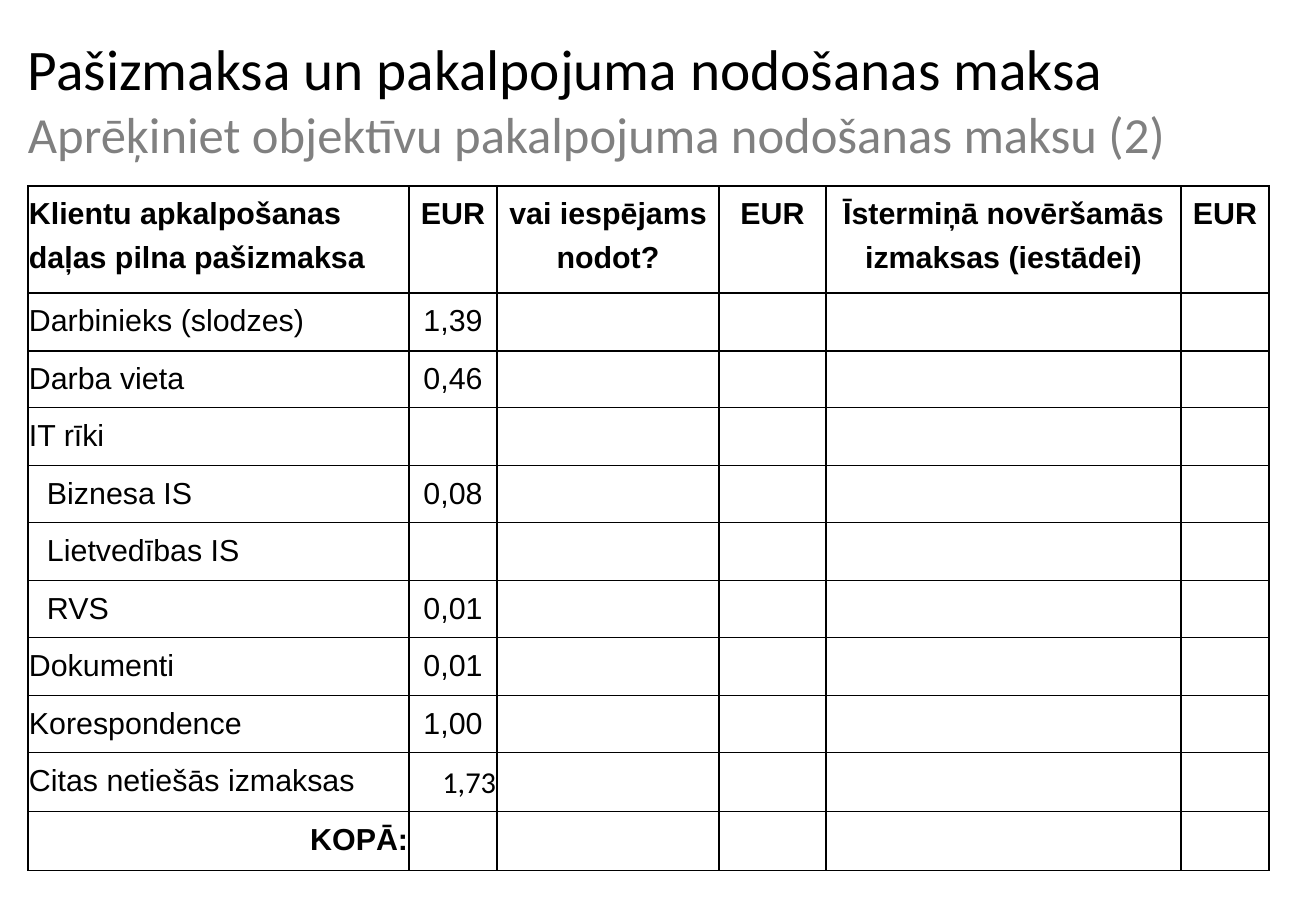
"""Build the slide with the cost and service transfer fee table."""
from dataclasses import dataclass

from lxml import etree
from pptx import Presentation, util as u
from pptx.dml.color import RGBColor
from pptx.enum import text as t
from pptx.oxml import ns

PX = 7526
COLORS = {"ink": "000000", "subtitle": "808080"}
COLUMN_WIDTHS = [381, 88, 222, 107, 355, 88]
ROW_HEIGHTS = [107] + [58, 57] * 4 + [59, 59]
INSET = 1
INDENT = 19
LEFT, CENTER, RIGHT = t.PP_ALIGN.LEFT, t.PP_ALIGN.CENTER, t.PP_ALIGN.RIGHT


@dataclass(frozen=True)
class CostItem:
    label: str
    cost: str = ""
    inset: int = INSET
    label_align: t.PP_ALIGN = LEFT
    cost_align: t.PP_ALIGN = CENTER
    cost_font: str = "Arial"
    bold: bool = False


HEADINGS = [
    "Klientu apkalpošanas daļas pilna pašizmaksa", "EUR", "vai iespējams nodot?",
    "EUR", "Īstermiņā novēršamās izmaksas (iestādei)", "EUR",
]
COST_ITEMS = [
    CostItem("Darbinieks (slodzes)", "1,39"),
    CostItem("Darba vieta", "0,46"),
    CostItem("IT rīki"),
    CostItem("Biznesa IS", "0,08", inset=INDENT),
    CostItem("Lietvedības IS", inset=INDENT),
    CostItem("RVS", "0,01", inset=INDENT),
    CostItem("Dokumenti", "0,01"),
    CostItem("Korespondence", "1,00"),
    CostItem("Citas netiešās izmaksas", "1,73", cost_align=RIGHT, cost_font="Calibri"),
    CostItem("KOPĀ:", label_align=RIGHT, bold=True),
]


def px(length: int) -> u.Emu:
    return u.Emu(length * PX)


def write(paragraph, content: str, *, size: int = 18, font: str = "Arial",
          color: str = "ink", bold: bool = False, align: t.PP_ALIGN = LEFT,
          spacing: float = 1.3) -> None:
    paragraph.alignment = align
    paragraph.line_spacing = spacing
    run = paragraph.add_run()
    run.text = content
    run.font.size = u.Pt(size)
    run.font.name = font
    run.font.bold = bold
    run.font.color.rgb = RGBColor.from_string(COLORS[color])


def style_cell(cell) -> None:
    cell.margin_left = cell.margin_right = cell.margin_top = px(INSET)
    cell.margin_bottom = 0
    properties = cell._tc.get_or_add_tcPr()
    for side in ("a:lnL", "a:lnR", "a:lnT", "a:lnB"):
        border = etree.SubElement(properties, ns.qn(side), w=str(u.Pt(1)))
        fill = etree.SubElement(border, ns.qn("a:solidFill"))
        etree.SubElement(fill, ns.qn("a:srgbClr"), val=COLORS["ink"])
    cell.fill.background()


def draw_costs(slide) -> None:
    costs = slide.shapes.add_table(
        len(ROW_HEIGHTS), len(COLUMN_WIDTHS), px(28), px(186),
        px(sum(COLUMN_WIDTHS)), px(sum(ROW_HEIGHTS))).table
    costs.first_row = costs.horz_banding = False
    for column, width in zip(costs.columns, COLUMN_WIDTHS):
        column.width = px(width)
    for row, height in zip(costs.rows, ROW_HEIGHTS):
        row.height = px(height)
    for cell in costs.iter_cells():
        style_cell(cell)

    for index, heading in enumerate(HEADINGS):
        write(costs.cell(0, index).text_frame.paragraphs[0], heading,
              bold=True, align=CENTER if index else LEFT)
    for index, item in enumerate(COST_ITEMS, start=1):
        label = costs.cell(index, 0)
        label.margin_left = px(item.inset)
        write(label.text_frame.paragraphs[0], item.label,
              bold=item.bold, align=item.label_align)
        if item.cost:
            write(costs.cell(index, 1).text_frame.paragraphs[0], item.cost,
                  font=item.cost_font, align=item.cost_align)


def draw_title(slide) -> None:
    frame = slide.shapes.add_textbox(px(28), px(22), px(1260), px(152)).text_frame
    frame.word_wrap = True
    frame.vertical_anchor = t.MSO_ANCHOR.MIDDLE
    frame.margin_left = frame.margin_right = frame.margin_top = frame.margin_bottom = 0
    title = frame.paragraphs[0]
    write(title, "Pašizmaksa un pakalpojuma nodošanas maksa",
          size=34, font="Calibri", spacing=1.01)
    title.add_line_break()
    write(title, "Aprēķiniet objektīvu pakalpojuma nodošanas maksu (2)",
          size=30, font="Calibri", color="subtitle", spacing=1.01)


def main() -> None:
    deck = Presentation()
    deck.slide_width, deck.slide_height = u.Inches(10.83), u.Inches(7.5)
    slide = deck.slides.add_slide(deck.slide_layouts[6])
    draw_costs(slide)
    draw_title(slide)
    deck.save("out.pptx")


if __name__ == "__main__":
    main()
